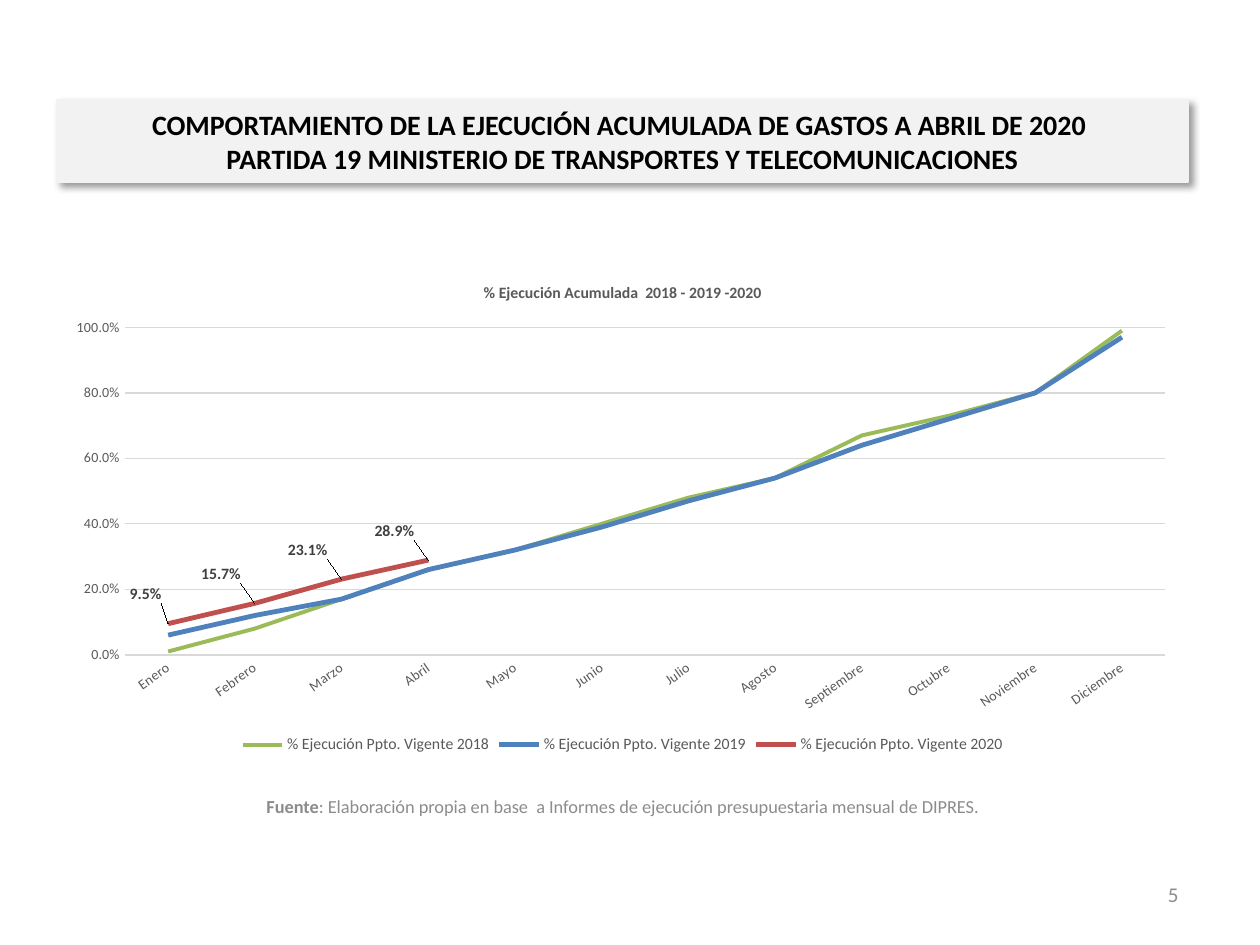
"""Build the slide on accumulated budget execution, 2018 to 2020."""
from lxml import etree
from pptx import Presentation
from pptx.chart.data import CategoryChartData as ChartData
from pptx.dml.color import RGBColor as Color
from pptx.enum.chart import XL_CHART_TYPE as ChartType
from pptx.enum.chart import XL_LABEL_POSITION as LabelPosition
from pptx.enum.chart import XL_LEGEND_POSITION as LegendPosition
from pptx.enum.chart import XL_TICK_MARK as TickMark
from pptx.enum.shapes import MSO_SHAPE as Shape
from pptx.enum.text import MSO_ANCHOR as Anchor
from pptx.enum.text import PP_ALIGN as Align
from pptx.oxml import parse_xml
from pptx.oxml.ns import nsdecls, qn
from pptx.util import Pt

SCALE = 914400 / 126
FONT = "Calibri"
COLORS = {
    "title": "000000", "band": "F2F2F2", "note": "8C8C8C", "axis": "595959",
    "grid": "D9D9D9", "label": "404040",
    "2018": "9BBB59", "2019": "4F81BD", "2020": "C0504D",
}
MONTHS = ["Enero", "Febrero", "Marzo", "Abril", "Mayo", "Junio", "Julio", "Agosto",
          "Septiembre", "Octubre", "Noviembre", "Diciembre"]
EXECUTION = {
    "2018": [0.01, 0.08, 0.17, 0.26, 0.32, 0.4, 0.48, 0.54, 0.67, 0.73, 0.8, 0.99],
    "2019": [0.06, 0.12, 0.17, 0.26, 0.32, 0.39, 0.47, 0.54, 0.64, 0.72, 0.8, 0.97],
    "2020": [0.095, 0.157, 0.231, 0.289],
}
WIDTHS = {"2018": 2.25, "2019": 2.75, "2020": 2.75}


def px(*lengths):
    return [round(length * SCALE) for length in lengths]


def style(font, size, color, bold=False):
    font.name, font.size, font.bold = FONT, Pt(size), bold
    font.color.rgb = Color.from_string(COLORS[color])


deck = Presentation()
deck.slide_width, deck.slide_height = px(1260, 945)
page = deck.slides.add_slide(deck.slide_layouts[6])

texts = [
    ([122, 781, 1002, 50], Align.CENTER, 10.5,
     [("Fuente", True),
      (": Elaboración propia en base  a Informes de ejecución presupuestaria mensual de DIPRES.", False)]),
    ([897, 869, 294, 50], Align.RIGHT, 12, [("5", False)]),
]
for place, align, size, parts in texts:
    frame = page.shapes.add_textbox(*px(*place)).text_frame
    frame.word_wrap, frame.vertical_anchor = True, Anchor.MIDDLE
    para = frame.paragraphs[0]
    para.alignment = align
    style(para.font, size, "note")
    for words, bold in parts:
        span = para.add_run()
        span.text, span.font.bold = words, bold

band = page.shapes.add_shape(Shape.RECTANGLE, *px(57, 100, 1131, 82))
band.fill.solid()
band.fill.fore_color.rgb = band.line.color.rgb = Color.from_string(COLORS["band"])
band.line.width = Pt(0.75)
band.shadow.inherit = False
effects = band._element.spPr.find(qn("a:effectLst"))
shadow = etree.SubElement(effects, qn("a:outerShdw"), blurRad=str(Pt(4)), dist=str(Pt(3)),
                          dir="2700000", algn="tl", rotWithShape="0")
shade = etree.SubElement(shadow, qn("a:srgbClr"), val=COLORS["title"])
etree.SubElement(shade, qn("a:alpha"), val="40000")
frame = band.text_frame
frame.word_wrap, frame.vertical_anchor = True, Anchor.MIDDLE
para = frame.paragraphs[0]
para.text = ("COMPORTAMIENTO DE LA EJECUCIÓN ACUMULADA DE GASTOS A ABRIL DE 2020 \v"
             "PARTIDA 19 MINISTERIO DE TRANSPORTES Y TELECOMUNICACIONES")
para.alignment = Align.CENTER
style(para.font, 16, "title", True)

data = ChartData(number_format="0.0%")
data.categories = MONTHS
for year, values in EXECUTION.items():
    data.add_series(f"% Ejecución Ppto. Vigente {year}", values)
chart = page.shapes.add_chart(ChartType.LINE, *px(57, 263, 1131, 496), data).chart
style(chart.font, 10, "title")
chart.has_title = True
para = chart.chart_title.text_frame.paragraphs[0]
para.text = "% Ejecución Acumulada  2018 - 2019 -2020"
style(para.font, 9, "axis", True)
chart.has_legend = True
chart.legend.position = LegendPosition.BOTTOM
chart.legend.include_in_layout = False
style(chart.legend.font, 9, "axis")

months, percents = chart.category_axis, chart.value_axis
for axis in (months, percents):
    axis.major_tick_mark = axis.minor_tick_mark = TickMark.NONE
    style(axis.tick_labels.font, 8, "axis")
months.format.line.color.rgb = Color.from_string(COLORS["grid"])
months.format.line.width = Pt(1)
months._element.find(qn("c:txPr")).find(qn("a:bodyPr")).set("rot", "-2100000")
percents.minimum_scale, percents.maximum_scale, percents.major_unit = 0, 1, 0.2
percents.tick_labels.number_format = "0.0%"
percents.tick_labels.number_format_is_linked = False
percents.format.line.fill.background()
percents.major_gridlines.format.line.color.rgb = Color.from_string(COLORS["grid"])
percents.major_gridlines.format.line.width = Pt(0.75)

plot = chart.plots[0]
plot.vary_by_categories = False
for year, series in zip(EXECUTION, plot.series):
    series.smooth = False
    series.format.line.color.rgb = Color.from_string(COLORS[year])
    series.format.line.width = Pt(WIDTHS[year])

labels = series.data_labels
labels.show_value = True
labels.number_format, labels.number_format_is_linked = "0.0%", False
labels.position = LabelPosition.ABOVE
style(labels.font, 9, "label", True)
for index in range(len(EXECUTION["2020"])):
    label = series.points[index].data_label
    style(label.font, 9, "label", True)
    label.position = LabelPosition.ABOVE
    shift = -0.02 if index == 0 else -0.03
    layout = parse_xml(f'<c:layout {nsdecls("c")}><c:manualLayout><c:x val="{shift}"/>'
                       '<c:y val="-0.03"/></c:manualLayout></c:layout>')
    labels._element.findall(qn("c:dLbl"))[index].find(qn("c:idx")).addnext(layout)

area = chart._chartSpace.chart.plotArea
for old in area.findall(qn("c:layout")):
    area.remove(old)
layout = etree.Element(qn("c:layout"))
manual = etree.SubElement(layout, qn("c:manualLayout"))
settings = {"layoutTarget": "inner", "xMode": "edge", "yMode": "edge",
            "x": round(71 / 1131, 2), "y": round(64 / 496, 2),
            "w": round(1038 / 1131, 2), "h": round(329 / 496, 2)}
for name, value in settings.items():
    etree.SubElement(manual, qn(f"c:{name}"), val=str(value))
area.insert(0, layout)

deck.save("out.pptx")
